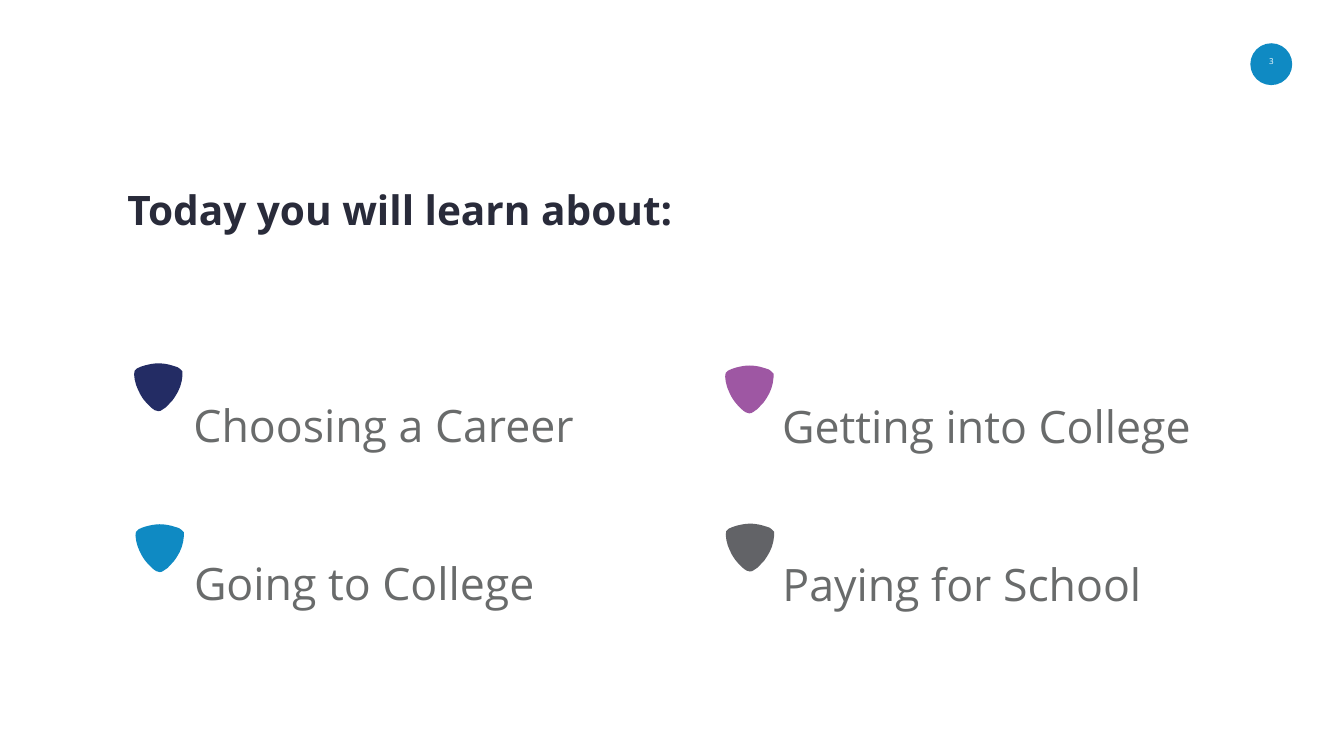
from dataclasses import dataclass
from lxml import etree
from pptx import Presentation
from pptx.dml.color import RGBColor
from pptx.enum.shapes import MSO_SHAPE
from pptx.enum.text import MSO_ANCHOR, MSO_AUTO_SIZE, PP_ALIGN
from pptx.oxml.ns import qn
from pptx.shapes.autoshape import Shape
from pptx.slide import Slide
from pptx.util import Cm, Pt

OVAL = MSO_SHAPE.OVAL
TOP, MIDDLE = MSO_ANCHOR.TOP, MSO_ANCHOR.MIDDLE
FIXED = MSO_AUTO_SIZE.NONE
LEFT, CENTER = PP_ALIGN.LEFT, PP_ALIGN.CENTER


@dataclass(frozen=True)
class Theme:
    face: str = "Open Sans"
    white: str = "FFFFFF"
    ink: str = "292B3A"
    body: str = "696B6B"
    navy: str = "232C64"
    blue: str = "0F8AC3"
    plum: str = "9E57A3"
    gray: str = "626367"
    page_size: int = 20
    head_size: int = 100
    item_size: int = 110
    raised: str = "55000"


@dataclass(frozen=True)
class Box:
    left: float
    top: float
    width: float
    height: float

    def place(self) -> tuple[Cm, Cm, Cm, Cm]:
        return Cm(self.left), Cm(self.top), Cm(self.width), Cm(self.height)


@dataclass(frozen=True)
class Topic:
    text: str
    color: str
    mark_left: float
    mark_top: float
    text_left: float
    text_top: float


THEME = Theme()
INSET = 0.15
MARK_SCALE = 2.54
START = (0, 0.22)
CURVES = [
    ((0, 0.2), (0, 0.17), (0.01, 0.15)),
    ((0.02, 0.13), (0.04, 0.12), (0.06, 0.1)),
    ((0.11, 0.07), (0.16, 0.06), (0.22, 0.04)),
    ((0.3, 0.02), (0.39, 0), (0.48, 0)),
    ((0.55, 0), (0.63, 0.01), (0.71, 0.03)),
    ((0.74, 0.04), (0.78, 0.05), (0.81, 0.06)),
    ((0.85, 0.07), (0.88, 0.08), (0.91, 0.11)),
    ((0.93, 0.12), (0.95, 0.14), (0.96, 0.16)),
    ((0.97, 0.19), (0.96, 0.21), (0.96, 0.24)),
    ((0.95, 0.39), (0.9, 0.53), (0.82, 0.65)),
    ((0.78, 0.71), (0.75, 0.76), (0.7, 0.8)),
    ((0.66, 0.85), (0.62, 0.89), (0.56, 0.92)),
    ((0.54, 0.94), (0.51, 0.95), (0.48, 0.95)),
    ((0.46, 0.95), (0.43, 0.94), (0.41, 0.93)),
    ((0.38, 0.91), (0.35, 0.89), (0.33, 0.87)),
    ((0.3, 0.84), (0.28, 0.82), (0.25, 0.79)),
    ((0.2, 0.74), (0.16, 0.68), (0.12, 0.61)),
    ((0.09, 0.55), (0.06, 0.49), (0.04, 0.43)),
    ((0.02, 0.36), (0, 0.29), START),
]
TOPICS = [
    Topic("Choosing a Career", THEME.navy, 6.76, 18.31, 9.6, 19.91),
    Topic("Going to College", THEME.blue, 6.83, 26.42, 9.63, 27.89),
    Topic("Getting into College", THEME.plum, 36.55, 18.42, 39.27, 19.94),
    Topic("Paying for School", THEME.gray, 36.58, 26.39, 39.29, 27.91),
]


def paint(shape: Shape, color: str) -> None:
    shape.fill.solid()
    shape.fill.fore_color.rgb = RGBColor.from_string(color)
    shape.line.fill.background()
    shape.shadow.inherit = False


def write(shape: Shape, text: str, size: int, color: str, align: PP_ALIGN = LEFT,
          anchor: MSO_ANCHOR = TOP, bold: bool = False, lines: float = 1.0) -> None:
    frame = shape.text_frame
    frame.word_wrap = True
    frame.auto_size = FIXED
    frame.vertical_anchor = anchor
    frame.margin_left = frame.margin_right = Cm(INSET)
    frame.margin_top = frame.margin_bottom = Cm(INSET)
    para = frame.paragraphs[0]
    para.alignment = align
    para.line_spacing = lines
    run = para.add_run()
    run.text = text
    props = run._r.get_or_add_rPr()
    props.set("baseline", THEME.raised)
    props.set("kern", "0")
    font = para.font
    font.name = THEME.face
    font.size = Pt(size)
    font.bold = bold
    font.color.rgb = RGBColor.from_string(color)


def add_page(slide: Slide, number: str) -> None:
    disc = slide.shapes.add_shape(OVAL, *Box(63.02, 2.18, 2.11, 2.11).place())
    paint(disc, THEME.blue)
    label = slide.shapes.add_textbox(*Box(62.89, 2.67, 2.39, 1.24).place())
    write(label, number, THEME.page_size, THEME.white, CENTER)


def add_title(slide: Slide, text: str) -> None:
    title = slide.shapes.title
    title.left, title.top, title.width, title.height = Box(6.27, 10.31, 47.65, 3.71).place()
    write(title, text, THEME.head_size, THEME.ink, anchor=MIDDLE, bold=True, lines=0.8)


def scale(point: tuple[float, float], left: float = 0, top: float = 0) -> tuple[Cm, Cm]:
    return Cm(left + point[0] * MARK_SCALE), Cm(top + point[1] * MARK_SCALE)


def add_mark(slide: Slide, left: float, top: float, color: str) -> None:
    pen = slide.shapes.build_freeform(*scale(START, left, top))
    pen.add_line_segments([scale(curve[-1], left, top) for curve in CURVES], close=True)
    mark = pen.convert_to_shape()
    edges = list(mark._element.iter(qn("a:lnTo")))
    for edge, curve in zip(edges, CURVES):
        bend = etree.Element(qn("a:cubicBezTo"))
        for point in curve:
            x, y = scale(point)
            etree.SubElement(bend, qn("a:pt"), x=str(x), y=str(y))
        edge.getparent().replace(edge, bend)
    paint(mark, color)


def add_topic(slide: Slide, topic: Topic) -> None:
    add_mark(slide, topic.mark_left, topic.mark_top, topic.color)
    label = slide.shapes.add_textbox(*Box(topic.text_left, topic.text_top, 25.4, 1.6).place())
    write(label, topic.text, THEME.item_size, THEME.body)


def main() -> None:
    deck = Presentation()
    deck.slide_width, deck.slide_height = Cm(67.74), Cm(38.1)
    slide = deck.slides.add_slide(deck.slide_layouts[5])
    add_page(slide, "3")
    add_title(slide, "Today you will learn about:")
    for topic in TOPICS:
        add_topic(slide, topic)
    deck.save("out.pptx")


if __name__ == "__main__":
    main()
